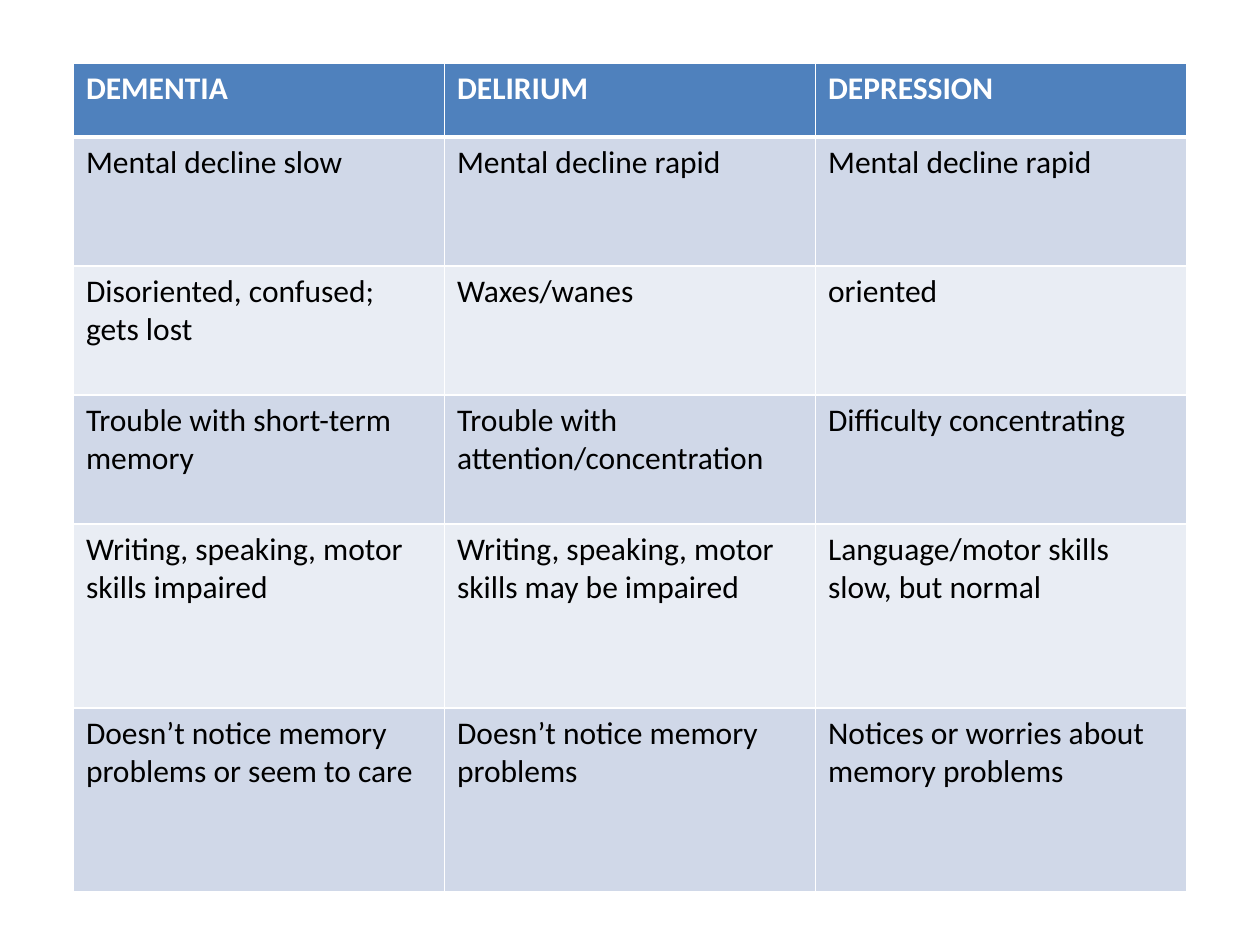
"""Build a one-slide comparison table of dementia, delirium and depression."""
from lxml.etree import SubElement
from pptx import Presentation
from pptx.dml.color import RGBColor
from pptx.oxml.ns import qn
from pptx.util import Cm, Pt

ROWS = [
    ("DEMENTIA", "DELIRIUM", "DEPRESSION"),
    ("Mental decline slow", "Mental decline rapid", "Mental decline rapid"),
    ("Disoriented, confused; gets lost", "Waxes/wanes", "oriented"),
    ("Trouble with short-term memory", "Trouble with attention/concentration",
     "Difficulty concentrating"),
    ("Writing, speaking, motor skills impaired",
     "Writing, speaking, motor skills may be impaired",
     "Language/motor skills slow, but normal"),
    ("Doesn’t notice memory problems or seem to care",
     "Doesn’t notice memory problems",
     "Notices or worries about memory problems"),
]
ROW_HEIGHTS = [1.49, 2.6, 2.6, 2.6, 3.71, 3.71]
COLUMN_WIDTH = 7.48
LEFT, TOP = 1.48, 1.27

FONT = "Calibri"
WHITE = RGBColor(0xFF, 0xFF, 0xFF)
BLACK = RGBColor(0x00, 0x00, 0x00)
HEADER_BLUE = RGBColor(0x4F, 0x81, 0xBD)
BANDS = [RGBColor(0xE9, 0xED, 0xF4), RGBColor(0xD0, 0xD8, 0xE8)]
THIN, THICK = Pt(1), Pt(3)


def set_borders(cell, top, bottom):
    properties = cell._tc.get_or_add_tcPr()
    widths = {"a:lnL": THIN, "a:lnR": THIN, "a:lnT": top, "a:lnB": bottom}
    for tag, width in widths.items():
        line = SubElement(properties, qn(tag), w=str(width))
        fill = SubElement(line, qn("a:solidFill"))
        SubElement(fill, qn("a:srgbClr"), val=str(WHITE))


def fill_cell(cell, text, row):
    header = row == 0
    set_borders(cell, THICK if row == 1 else THIN, THICK if header else THIN)
    cell.fill.solid()
    cell.fill.fore_color.rgb = HEADER_BLUE if header else BANDS[row % 2]
    span = cell.text_frame.paragraphs[0].add_run()
    span.text = text
    span.font.name = FONT
    span.font.size = Pt(18)
    span.font.bold = header
    span.font.color.rgb = WHITE if header else BLACK


def main():
    deck = Presentation()
    deck.slide_width, deck.slide_height = Cm(25.4), Cm(19.05)
    page = deck.slides.add_slide(deck.slide_layouts[6])
    columns = len(ROWS[0])
    table = page.shapes.add_table(
        len(ROWS), columns, Cm(LEFT), Cm(TOP),
        Cm(COLUMN_WIDTH * columns), Cm(sum(ROW_HEIGHTS))).table
    for column in table.columns:
        column.width = Cm(COLUMN_WIDTH)
    for row, (texts, height) in enumerate(zip(ROWS, ROW_HEIGHTS)):
        table.rows[row].height = Cm(height)
        for column, text in enumerate(texts):
            fill_cell(table.cell(row, column), text, row)
    deck.save("out.pptx")


if __name__ == "__main__":
    main()
